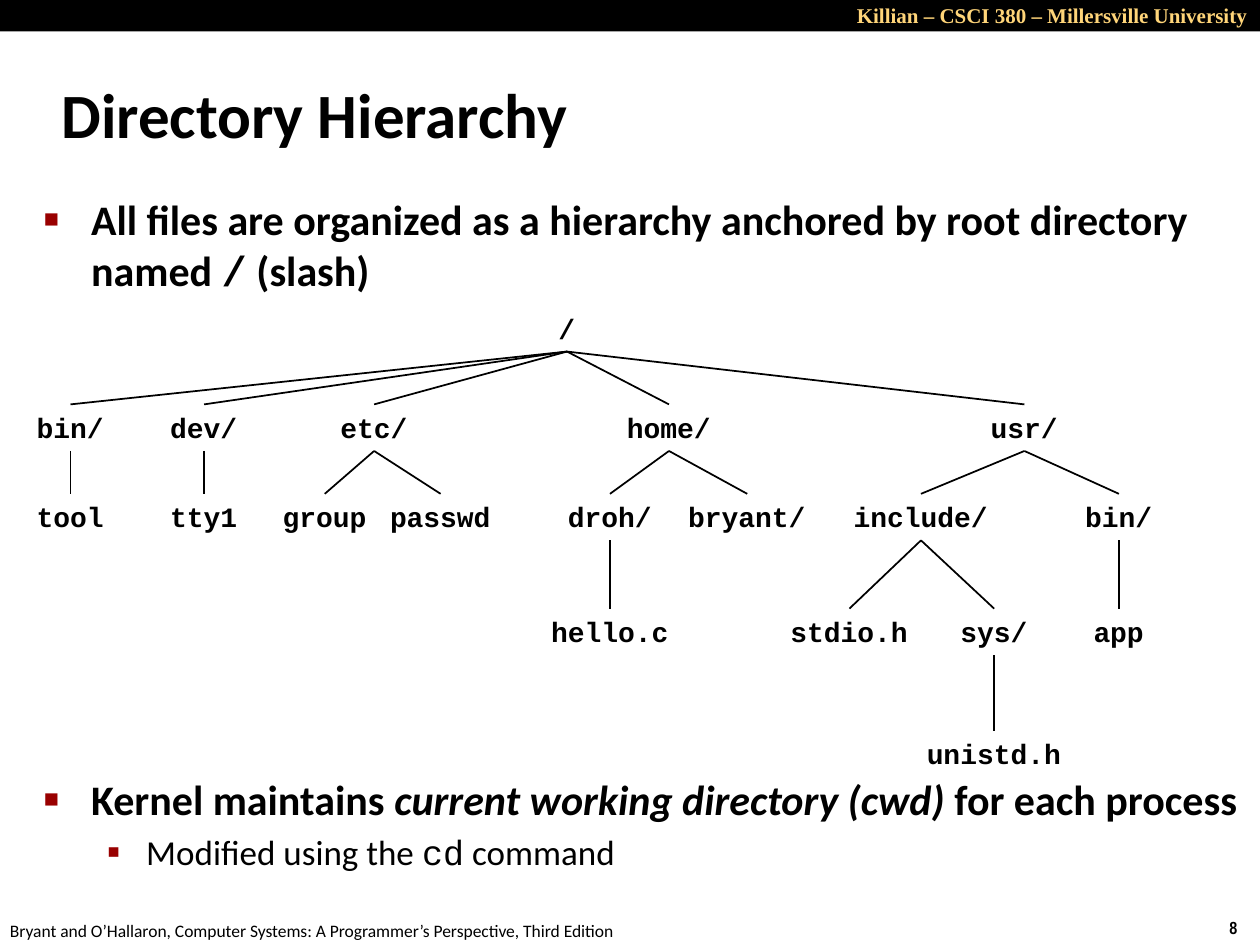
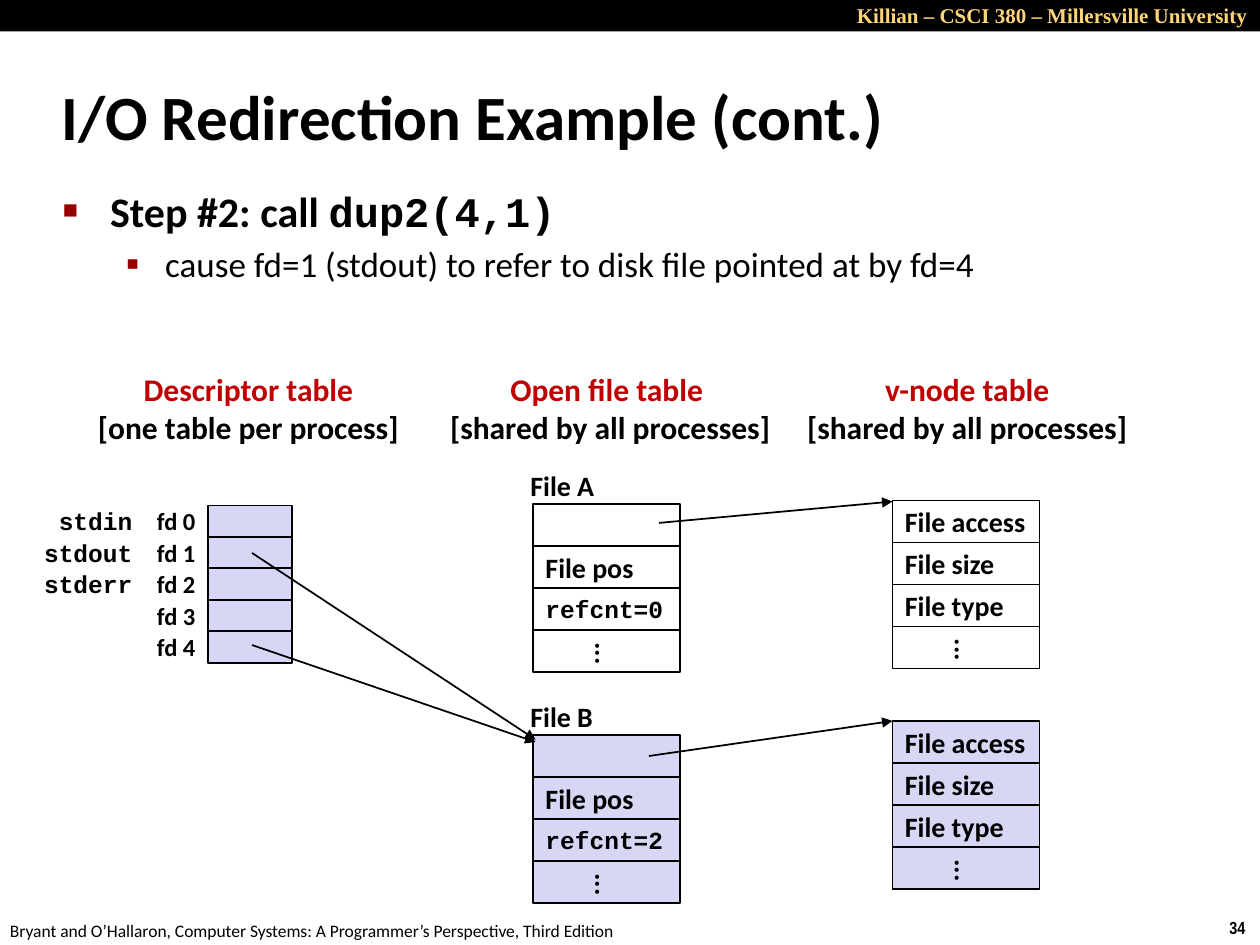
"""Build two systems-programming slides: a directory tree and an I/O redirection diagram."""
from dataclasses import dataclass

from lxml.etree import SubElement
from pptx import Presentation
from pptx.dml.color import RGBColor
from pptx.enum.shapes import MSO_CONNECTOR, MSO_SHAPE
from pptx.enum.text import MSO_ANCHOR, PP_ALIGN
from pptx.oxml.ns import qn
from pptx.util import Pt


@dataclass(frozen=True)
class Theme:
    """Colours, typefaces and type sizes shared by the slides."""
    ink: str = "000000"
    paper: str = "FFFFFF"
    gold: str = "FFD579"
    bullet: str = "990000"
    heading: str = "C00000"
    lilac: str = "D6D6F5"
    sans: str = "Calibri"
    mono: str = "Courier New"
    serif: str = "Times New Roman"
    narrow: str = "Arial Narrow"
    title: int = 36
    point: int = 24
    detail: int = 20
    caption: int = 18
    label: int = 16
    small: int = 14
    course: int = 12
    footer: int = 10
    rule: int = 1


THEME = Theme()
BULLETS = (
    {"char": "■", "percent": 60, "margin": 27, "hang": 27, "before": 4.8},
    {"char": "▪", "percent": 110, "margin": 58.5, "hang": 22.5, "before": 4},
)
LEVEL_TOPS = (174.3, 231.1, 282.2, 347.8, 417.6)
LABEL_HEIGHT = 26.6
CHAR_WIDTH = 9.6
INSET = 7.2
RECORD_WIDTH, RECORD_ROW = 84, 24
DESCRIPTOR_LEFT, DESCRIPTOR_TOP = 118.8, 288.8
DESCRIPTOR_WIDTH, DESCRIPTOR_ROW = 48, 18

DIRECTORY_TREE = ("/", 324, [
    ("bin/", 40.3, [("tool", 40.3, [])]),
    ("dev/", 116.6, [("tty1", 116.6, [])]),
    ("etc/", 213.8, [("group", 185.6, []), ("passwd", 251.8, [])]),
    ("home/", 382.3, [
        ("droh/", 348.6, [("hello.c", 348.6, [])]),
        ("bryant/", 427, []),
    ]),
    ("usr/", 585.4, [
        ("include/", 526.3, [
            ("stdio.h", 485.4, []),
            ("sys/", 568.1, [("unistd.h", 568.1, [])]),
        ]),
        ("bin/", 639.4, [("app", 639.4, [])]),
    ]),
])


def style(size, name=THEME.sans, bold=True, italic=False, color=THEME.ink):
    """Return the format values of a run."""
    return {"size": Pt(size), "name": name, "bold": bold, "italic": italic, "color": color}


def set_values(target, values):
    """Set each named attribute on the target."""
    for attribute, value in values.items():
        setattr(target, attribute, value)


def add_runs(paragraph, runs):
    """Append (text, style) runs to a paragraph."""
    for text, look in runs:
        run = paragraph.add_run()
        run.text = text
        set_values(run.font, {key: value for key, value in look.items() if key != "color"})
        run.font.color.rgb = RGBColor.from_string(look["color"])


def fill_frame(frame, paragraphs, align=PP_ALIGN.LEFT, anchor=MSO_ANCHOR.TOP, wrap=False):
    """Write paragraphs of runs into a text frame."""
    set_values(frame, {"word_wrap": wrap, "vertical_anchor": anchor})
    for index, runs in enumerate(paragraphs):
        paragraph = frame.add_paragraph() if index else frame.paragraphs[0]
        paragraph.alignment = align
        add_runs(paragraph, runs)


def add_text(slide, box, paragraphs, **layout):
    """Add a text box whose box is left, top, width, height in points."""
    label = slide.shapes.add_textbox(*map(Pt, box))
    fill_frame(label.text_frame, paragraphs, **layout)
    return label


def add_bullets(slide, box, points):
    """Add bulleted paragraphs given as (level, runs) pairs."""
    body = add_text(slide, box, [runs for _, runs in points], wrap=True)
    for index, (level, _) in enumerate(points):
        bullet = BULLETS[level]
        paragraph = body.text_frame.paragraphs[index]
        paragraph.level = level
        paragraph.space_before = Pt(bullet["before"] if index else 0)
        properties = paragraph._p.get_or_add_pPr()
        properties.set("marL", str(Pt(bullet["margin"])))
        properties.set("indent", str(-Pt(bullet["hang"])))
        colour = SubElement(properties, qn("a:buClr"))
        SubElement(colour, qn("a:srgbClr"), val=THEME.bullet)
        SubElement(properties, qn("a:buSzPct"), val=str(bullet["percent"] * 1000))
        SubElement(properties, qn("a:buFont"), typeface=THEME.serif)
        SubElement(properties, qn("a:buChar"), char=bullet["char"])


def add_cell(slide, box, fill, outline=True):
    """Add a plain rectangle."""
    cell = slide.shapes.add_shape(MSO_SHAPE.RECTANGLE, *map(Pt, box))
    cell.shadow.inherit = False
    cell.fill.solid()
    cell.fill.fore_color.rgb = RGBColor.from_string(fill)
    if outline:
        cell.line.color.rgb = RGBColor.from_string(THEME.ink)
        cell.line.width = Pt(THEME.rule)
    else:
        cell.line.fill.background()
    return cell


def add_line(slide, start=(0, 0), end=(0, 0), arrow=False):
    """Add a straight line, with an arrowhead at its end if asked."""
    line = slide.shapes.add_connector(MSO_CONNECTOR.STRAIGHT, *map(Pt, (*start, *end)))
    line.line.color.rgb = RGBColor.from_string(THEME.ink)
    line.line.width = Pt(THEME.rule)
    if arrow:
        SubElement(line.line._get_or_add_ln(), qn("a:tailEnd"), type="triangle")
    SubElement(line._element.spPr, qn("a:effectLst"))
    return line


def add_page(deck, title, title_top, number):
    """Add a slide with its band, course name, title, footer and number."""
    slide = deck.slides.add_slide(deck.slide_layouts[6])
    add_cell(slide, (0, 0, 720, 18), THEME.ink, outline=False)
    course = style(THEME.course, THEME.serif, color=THEME.gold)
    add_text(slide, (480, -2, 240, 21.6),
             [[("Killian – CSCI 380 – Millersville University", course)]],
             align=PP_ALIGN.RIGHT, wrap=True)
    add_text(slide, (695.5, 520.6, 24.5, 19.4),
             [[(str(number), style(THEME.footer, THEME.narrow))]])
    book = "Bryant and O’Hallaron, Computer Systems: A Programmer’s Perspective, Third Edition"
    add_text(slide, (-1.4, 522, 365.8, 19.4),
             [[(book, style(THEME.footer, bold=False))]])
    add_text(slide, (28, title_top, 598, 60), [[(title, style(THEME.title))]],
             anchor=MSO_ANCHOR.MIDDLE, wrap=True)
    return slide


def add_branch(slide, node, depth=0):
    """Draw a directory entry, its children and the lines between them."""
    name, centre, children = node
    width = len(name) * CHAR_WIDTH + 2 * INSET
    entry = add_text(slide, (centre - width / 2, LEVEL_TOPS[depth], width, LABEL_HEIGHT),
                     [[(name, style(THEME.label, THEME.mono))]])
    for child in children:
        child_entry = add_branch(slide, child, depth + 1)
        edge = add_line(slide)
        edge.begin_connect(entry, 2)
        edge.end_connect(child_entry, 0)
    return entry


def add_record(slide, left, top, fields, fill):
    """Stack the fields of one table entry, ending in a vertical ellipsis."""
    rows = [*fields, ("...", style(THEME.label))]
    for index, (text, look) in enumerate(rows):
        box = (left, top + index * RECORD_ROW, RECORD_WIDTH, RECORD_ROW)
        cell = add_cell(slide, box, fill)
        if text:
            fill_frame(cell.text_frame, [[(text, look)]], anchor=MSO_ANCHOR.MIDDLE)
        if text == "...":
            cell.text_frame._txBody.bodyPr.set("vert", "eaVert")


def add_row_labels(slide, right, names, font):
    """Write right-aligned names beside the descriptor rows."""
    width = 66
    for index, name in enumerate(names):
        top = DESCRIPTOR_TOP + index * DESCRIPTOR_ROW
        add_text(slide, (right - width, top, width, DESCRIPTOR_ROW),
                 [[(name, style(THEME.small, font))]],
                 align=PP_ALIGN.RIGHT, anchor=MSO_ANCHOR.MIDDLE, wrap=True)


def build_hierarchy(deck):
    """Build the directory hierarchy slide."""
    slide = add_page(deck, "Directory Hierarchy", 34.6, 8)
    point, detail = style(THEME.point), style(THEME.detail, bold=False)
    add_bullets(slide, (18, 107.3, 700.5, 66), [
        (0, [("All files are organized as a hierarchy anchored by root directory named ", point),
             ("/", style(THEME.point, THEME.mono)), (" (slash)", point)]),
    ])
    add_bullets(slide, (18, 438.5, 700.5, 70), [
        (0, [("Kernel maintains ", point),
             ("current working directory (cwd) ", style(THEME.point, italic=True)),
             ("for each process", point)]),
        (1, [("Modified using the ", detail),
             ("cd", style(THEME.detail, THEME.mono, bold=False)), (" command", detail)]),
    ])
    add_branch(slide, DIRECTORY_TREE)


def build_redirection(deck):
    """Build the I/O redirection slide."""
    slide = add_page(deck, "I/O Redirection Example (cont.)", 36, 34)
    add_bullets(slide, (28.8, 102.2, 679, 77.8), [
        (0, [("Step #2: call ", style(THEME.point)),
             ("dup2(4,1)", style(THEME.point, THEME.mono))]),
        (1, [("cause fd=1 (stdout) to refer to disk file pointed at by fd=4",
              style(THEME.detail, bold=False))]),
    ])

    shared = "[shared by all processes]"
    for left, width, name, scope in (
        (48, 188, "Descriptor table", "[one table per process]"),
        (249, 199.5, "Open file table ", shared),
        (453, 199.5, "v-node table", shared),
    ):
        add_text(slide, (left, 207.4, width, 51),
                 [[(name, style(THEME.caption, color=THEME.heading))],
                  [(scope, style(THEME.caption))]],
                 align=PP_ALIGN.CENTER, anchor=MSO_ANCHOR.MIDDLE)

    descriptors = [f"fd {number}" for number in range(5)]
    for index in range(len(descriptors)):
        top = DESCRIPTOR_TOP + index * DESCRIPTOR_ROW
        add_cell(slide, (DESCRIPTOR_LEFT, top, DESCRIPTOR_WIDTH, DESCRIPTOR_ROW), THEME.lilac)
    add_row_labels(slide, DESCRIPTOR_LEFT, descriptors, THEME.sans)
    add_row_labels(slide, 82.8, ("stdin", "stdout", "stderr"), THEME.mono)

    label = style(THEME.label)
    vnode_fields = [(text, label) for text in ("File access", "File size", "File type")]
    for file_name, count, file_top, vnode_top, fill in (
        ("File A", 0, 288, 286, THEME.paper),
        ("File B", 2, 420, 412, THEME.lilac),
    ):
        file_fields = [("", label), ("File pos", label),
                       (f"refcnt={count}", style(THEME.small, THEME.mono))]
        add_record(slide, 304.6, file_top, file_fields, fill)
        add_record(slide, 510, vnode_top, vnode_fields, fill)
        add_text(slide, (296, file_top - 24, 51, LABEL_HEIGHT), [[(file_name, label)]],
                 anchor=MSO_ANCHOR.MIDDLE)

    for start, end in (
        ((144, 316), (306, 422.6)),
        ((144, 368.6), (306, 424)),
        ((376.6, 298.8), (510, 286.6)),
        ((370.8, 432), (510, 412)),
    ):
        add_line(slide, start, end, arrow=True)


def main():
    """Create the deck and save it."""
    deck = Presentation()
    set_values(deck, {"slide_width": Pt(720), "slide_height": Pt(540)})
    build_hierarchy(deck)
    build_redirection(deck)
    deck.save("out.pptx")


if __name__ == "__main__":
    main()
